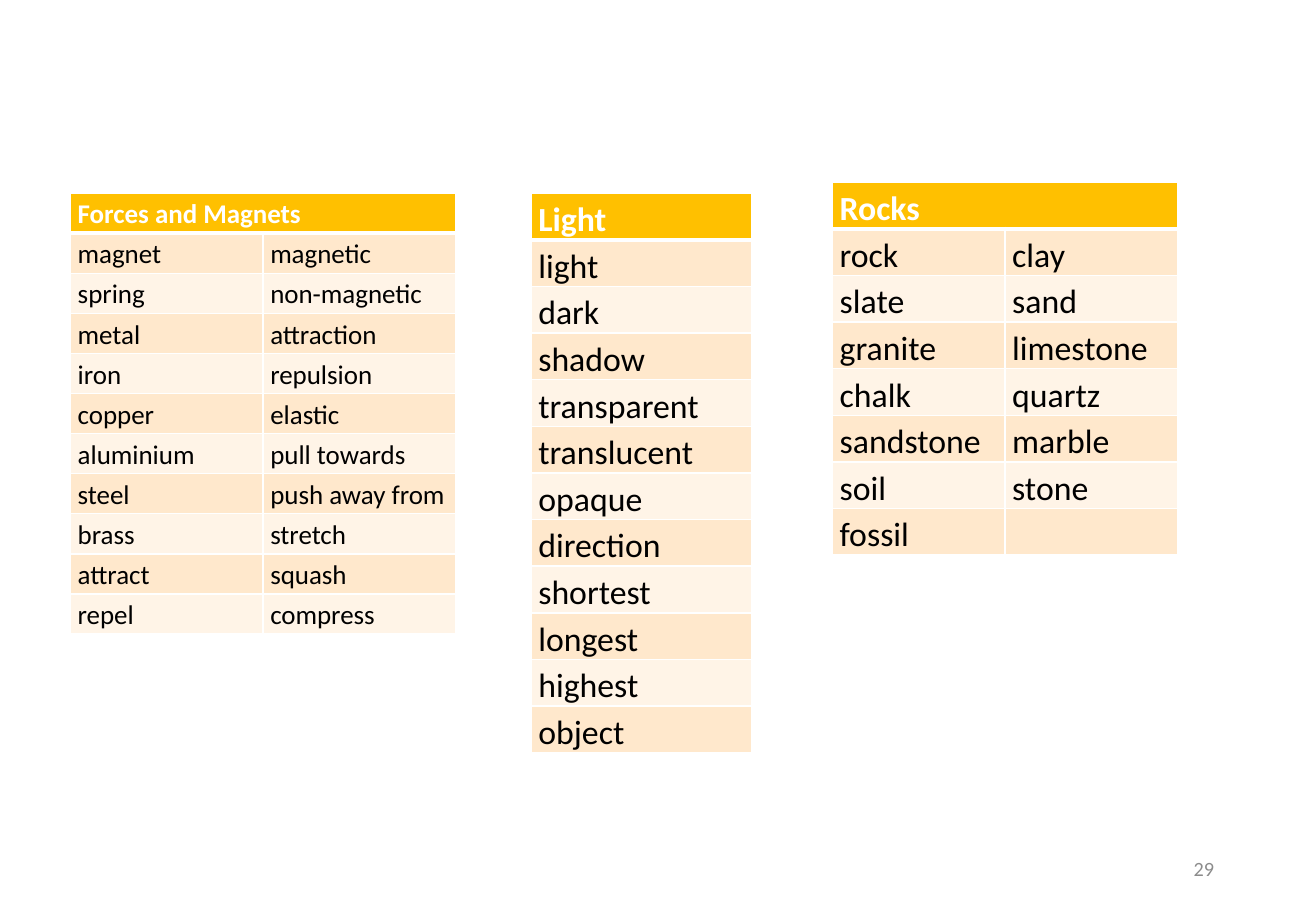
import pptx
import pptx.dml.color
import pptx.enum.text
import pptx.oxml.ns
import pptx.util
from lxml import etree

Inches = pptx.util.Inches
Align = pptx.enum.text.PP_ALIGN
Anchor = pptx.enum.text.MSO_ANCHOR

COLORS = {
    "header": "FFC000",
    "odd_row": "FFE8CC",
    "even_row": "FFF4E7",
    "white": "FFFFFF",
    "word": "000000",
    "page_number": "8C8C8C",
}

FORCES = [
    ("magnet", "magnetic"),
    ("spring", "non-magnetic"),
    ("metal", "attraction"),
    ("iron", "repulsion"),
    ("copper", "elastic"),
    ("aluminium", "pull towards"),
    ("steel", "push away from"),
    ("brass", "stretch"),
    ("attract", "squash"),
    ("repel", "compress"),
]
LIGHT = [
    ("light",), ("dark",), ("shadow",), ("transparent",),
    ("translucent",), ("opaque",), ("direction",), ("shortest",),
    ("longest",), ("highest",), ("object",),
]
ROCKS = [
    ("rock", "clay"),
    ("slate", "sand"),
    ("granite", "limestone"),
    ("chalk", "quartz"),
    ("sandstone", "marble"),
    ("soil", "stone"),
    ("fossil", ""),
]


def rgb(name):
    return pptx.dml.color.RGBColor.from_string(COLORS[name])


def write(frame, text, size, color, bold=False, align=Align.LEFT, spacing=1.0):
    para = frame.paragraphs[0]
    para.alignment = align
    para.line_spacing = spacing
    if not text:
        para.font.size = pptx.util.Pt(size)
        return
    span = para.add_run()
    span.text = text
    span.font.name = "Calibri"
    span.font.size = pptx.util.Pt(size)
    span.font.bold = bold
    span.font.color.rgb = rgb(color)


def add_borders(cell, top, bottom):
    """Draw white borders; top and bottom are widths in points."""
    properties = cell._tc.get_or_add_tcPr()
    qn = pptx.oxml.ns.qn
    for side, width in (("L", 1), ("R", 1), ("T", top), ("B", bottom)):
        line = etree.SubElement(properties, qn(f"a:ln{side}"), w=str(pptx.util.Pt(width)))
        fill = etree.SubElement(line, qn("a:solidFill"))
        etree.SubElement(fill, qn("a:srgbClr"), val=COLORS["white"])


def add_word_table(page, box, heading, words, row_height, size):
    left, top, width = box
    columns = len(words[0])
    rows = [(heading,) + ("",) * (columns - 1)] + words
    table = page.shapes.add_table(
        len(rows), columns, Inches(left), Inches(top),
        Inches(width), Inches(row_height * len(rows)),
    ).table
    for row_index, texts in enumerate(rows):
        table.rows[row_index].height = Inches(row_height)
        is_header = row_index == 0
        band = "header" if is_header else ("even_row", "odd_row")[row_index % 2]
        for column_index, text in enumerate(texts):
            cell = table.cell(row_index, column_index)
            cell.margin_left = cell.margin_right = Inches(0.06)
            cell.margin_top = cell.margin_bottom = 0
            add_borders(cell, top=3 if row_index == 1 else 1, bottom=3 if is_header else 1)
            cell.fill.solid()
            cell.fill.fore_color.rgb = rgb(band)
            write(cell.text_frame, text, size, "white" if is_header else "word",
                  bold=is_header, spacing=1.15)
    if columns > 1:
        table.cell(0, 0).merge(table.cell(0, columns - 1))


def add_page_number(page, box, number):
    frame = page.shapes.add_textbox(*map(Inches, box)).text_frame
    frame.word_wrap = True
    frame.vertical_anchor = Anchor.MIDDLE
    write(frame, number, 12, "page_number", align=Align.RIGHT)


def main():
    deck = pptx.Presentation()
    deck.slide_width = Inches(10.83)
    deck.slide_height = Inches(7.5)
    page = deck.slides.add_slide(deck.slide_layouts[6])
    add_page_number(page, (7.65, 6.95, 2.44, 0.4), "29")
    add_word_table(page, (0.58, 1.59, 3.17), "Forces and Magnets", FORCES, 0.33, 16)
    add_word_table(page, (4.37, 1.59, 1.82), "Light", LIGHT, 0.35, 20)
    add_word_table(page, (6.85, 1.5, 2.84), "Rocks", ROCKS, 0.35, 20)
    deck.save("out.pptx")


if __name__ == "__main__":
    main()
